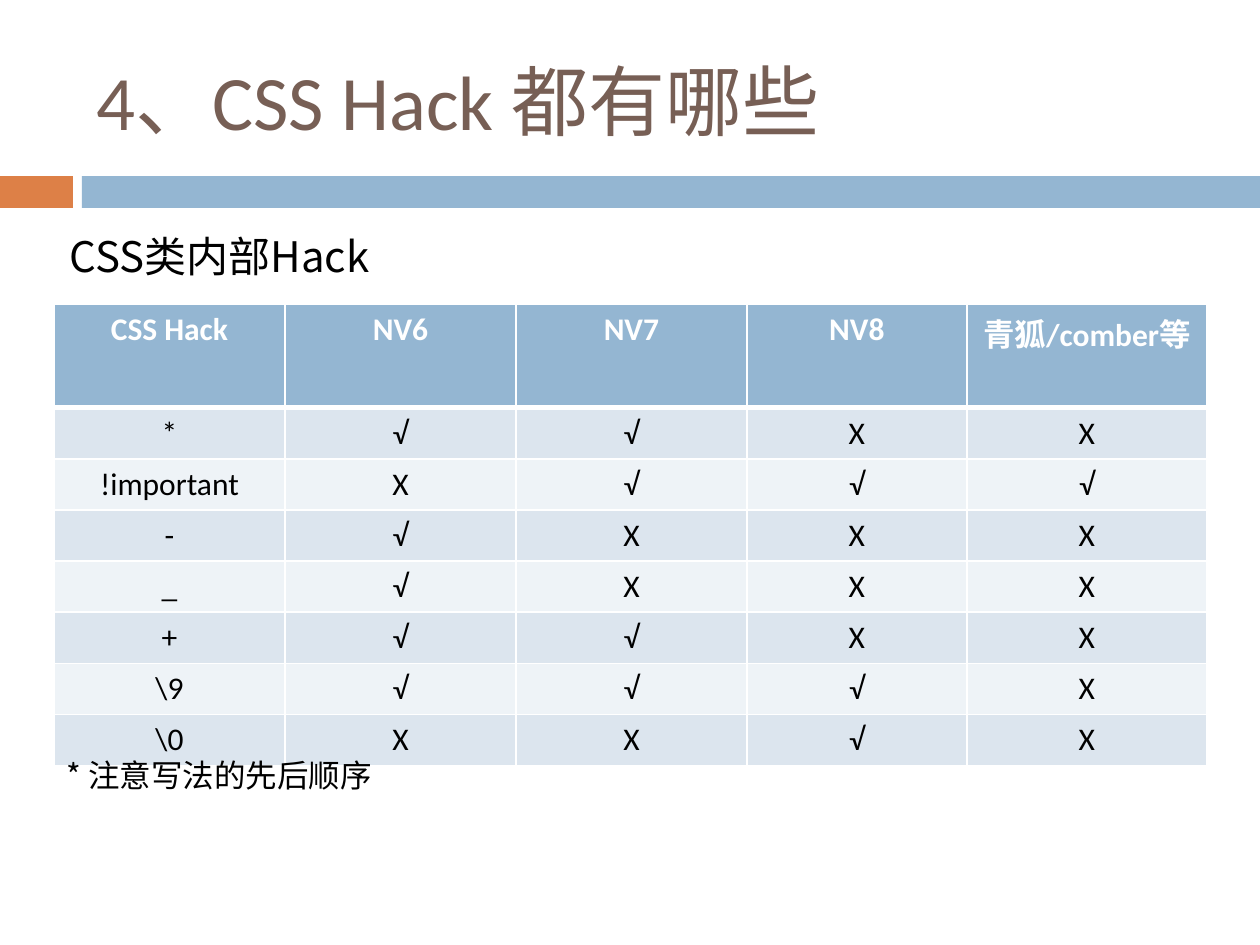
from lxml.etree import SubElement
from pptx import Presentation
from pptx.dml.color import RGBColor
from pptx.enum.shapes import MSO_SHAPE as SHAPE
from pptx.enum.text import MSO_ANCHOR as ANCHOR, PP_ALIGN as ALIGN
from pptx.oxml.ns import qn
from pptx.util import Pt

COLORS = {"orange": "DD8047", "blue": "94B6D2", "brown": "775F55",
          "band": "DCE5EE", "light": "EEF3F7", "white": "FFFFFF", "black": "000000"}
LATIN, CJK = "Calibri", "Noto Sans CJK SC"

BARS = [((0, 176, 73, 32), "orange"), ((82, 176, 1178, 32), "blue")]
TEXTS = [
    ("4、CSS Hack 都有哪些", (84, 32, 1124, 136), ANCHOR.MIDDLE,
     {"size": 44, "name": LATIN, "color": "brown"}),
    ("CSS类内部Hack", (57, 224, 674, 63), ANCHOR.TOP,
     {"size": 24, "name": CJK, "color": "black"}),
    ("* 注意写法的先后顺序", (54, 750, 336, 50), ANCHOR.TOP,
     {"size": 18, "name": CJK, "color": "black"}),
]
HEADER = ["CSS Hack", "NV6", "NV7", "NV8", "青狐/comber等"]
SUPPORT = [
    ("*", "√√XX"),
    ("!important", "X√√√"),
    ("-", "√XXX"),
    ("_", "√XXX"),
    ("+", "√√XX"),
    ("\\9", "√√√X"),
    ("\\0", "XX√X"),
]
TABLE_LEFT, TABLE_TOP, ROW_HEIGHT = 54, 304, 51
COLUMNS = [231, 231, 231, 220, 240]
SCALE = 914400 / 126


def px(n):
    return round(n * SCALE)


def rgb(name):
    return RGBColor.from_string(COLORS[name])


def write(tf, text, fmt, align=ALIGN.LEFT):
    p = tf.paragraphs[0]
    p.alignment = align
    r = p.add_run()
    r.text = text
    values = {**fmt, "size": Pt(fmt["size"])}
    r.font.color.rgb = rgb(values.pop("color"))
    for key, value in values.items():
        setattr(r.font, key, value)
    SubElement(r.font._element, qn("a:ea"), typeface=CJK)


def add_borders(cell, widths):
    tc_pr = cell._tc.get_or_add_tcPr()
    for side, width in zip("LRTB", widths):
        line = SubElement(tc_pr, qn("a:ln" + side), w=str(Pt(width)))
        fill = SubElement(line, qn("a:solidFill"))
        SubElement(fill, qn("a:srgbClr"), val=COLORS["white"])


def add_support_table(s):
    rows = [HEADER] + [[hack, *marks] for hack, marks in SUPPORT]
    table = s.shapes.add_table(len(rows), len(COLUMNS), px(TABLE_LEFT), px(TABLE_TOP),
                               px(sum(COLUMNS)), px(ROW_HEIGHT * len(rows))).table
    for column, width in zip(table.columns, COLUMNS):
        column.width = px(width)
    for i, row in enumerate(rows):
        table.rows[i].height = px(ROW_HEIGHT)
        head = i == 0
        fill = "blue" if head else ("light", "band")[i % 2]
        fmt = {"size": 18, "name": LATIN, "bold": head,
               "color": "white" if head else "black"}
        for j, text in enumerate(row):
            cell = table.cell(i, j)
            add_borders(cell, (1, 1, 3 if i == 1 else 1, 3 if head else 1))
            cell.fill.solid()
            cell.fill.fore_color.rgb = rgb(fill)
            write(cell.text_frame, text, fmt, ALIGN.CENTER)


def main():
    prs = Presentation()
    prs.slide_width, prs.slide_height = px(1260), px(945)
    s = prs.slides.add_slide(prs.slide_layouts[6])
    for box, color in BARS:
        sp = s.shapes.add_shape(SHAPE.RECTANGLE, *map(px, box))
        sp.shadow.inherit = False
        sp.fill.solid()
        sp.fill.fore_color.rgb = rgb(color)
        sp.line.fill.background()
    add_support_table(s)
    for text, box, anchor, fmt in TEXTS:
        tf = s.shapes.add_textbox(*map(px, box)).text_frame
        tf.word_wrap = True
        tf.vertical_anchor = anchor
        write(tf, text, fmt)
    prs.save("out.pptx")


if __name__ == "__main__":
    main()
